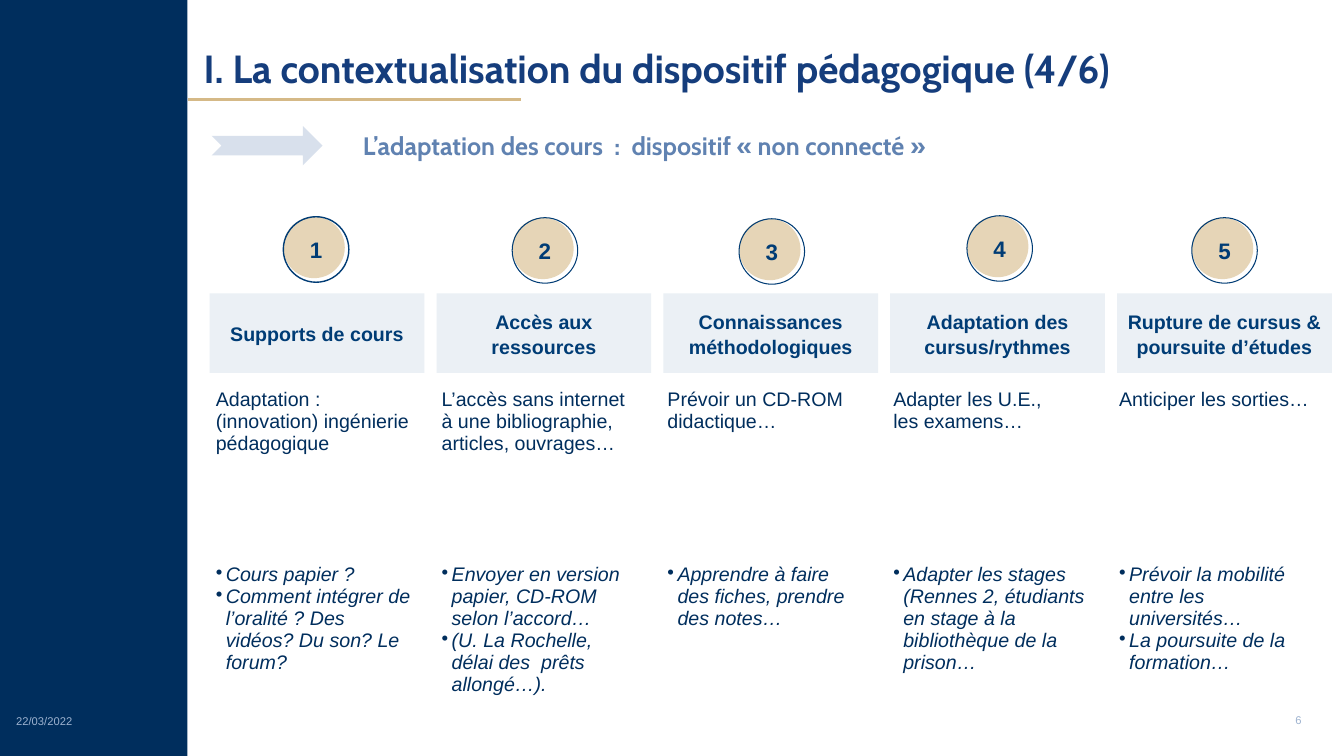
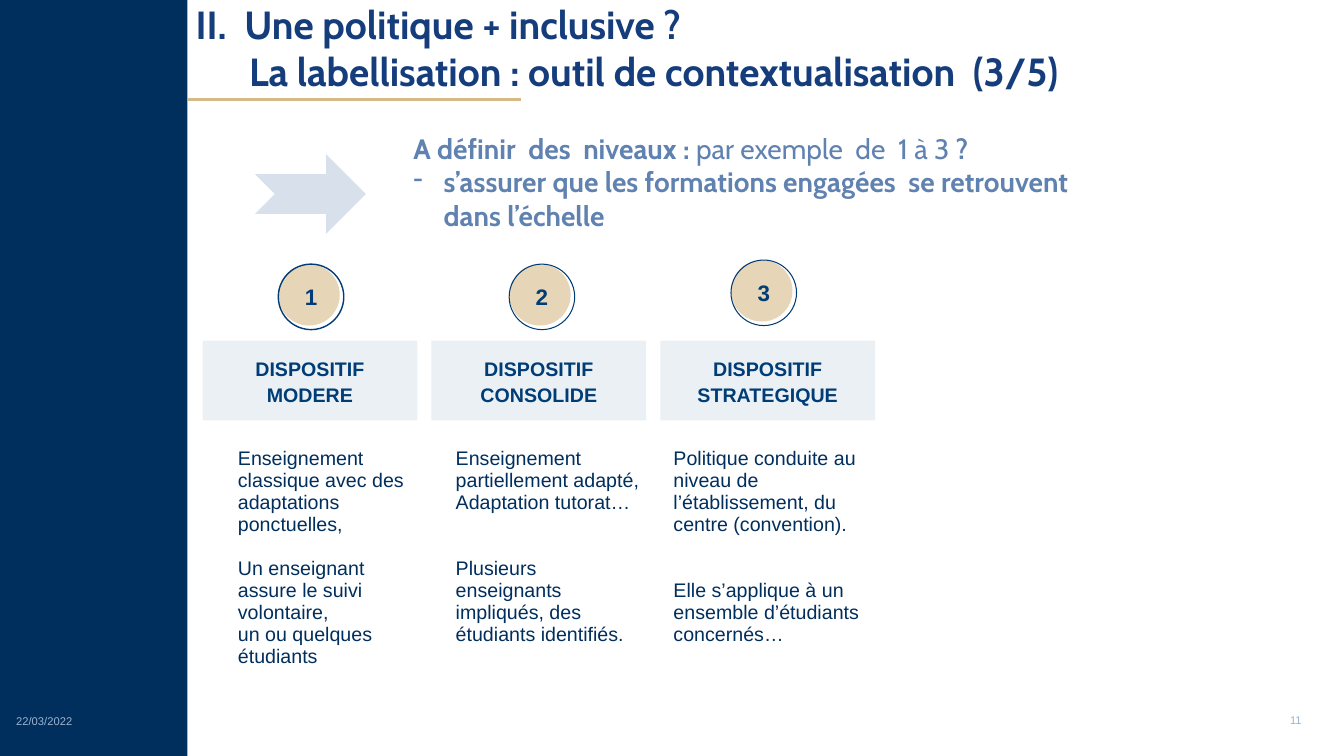
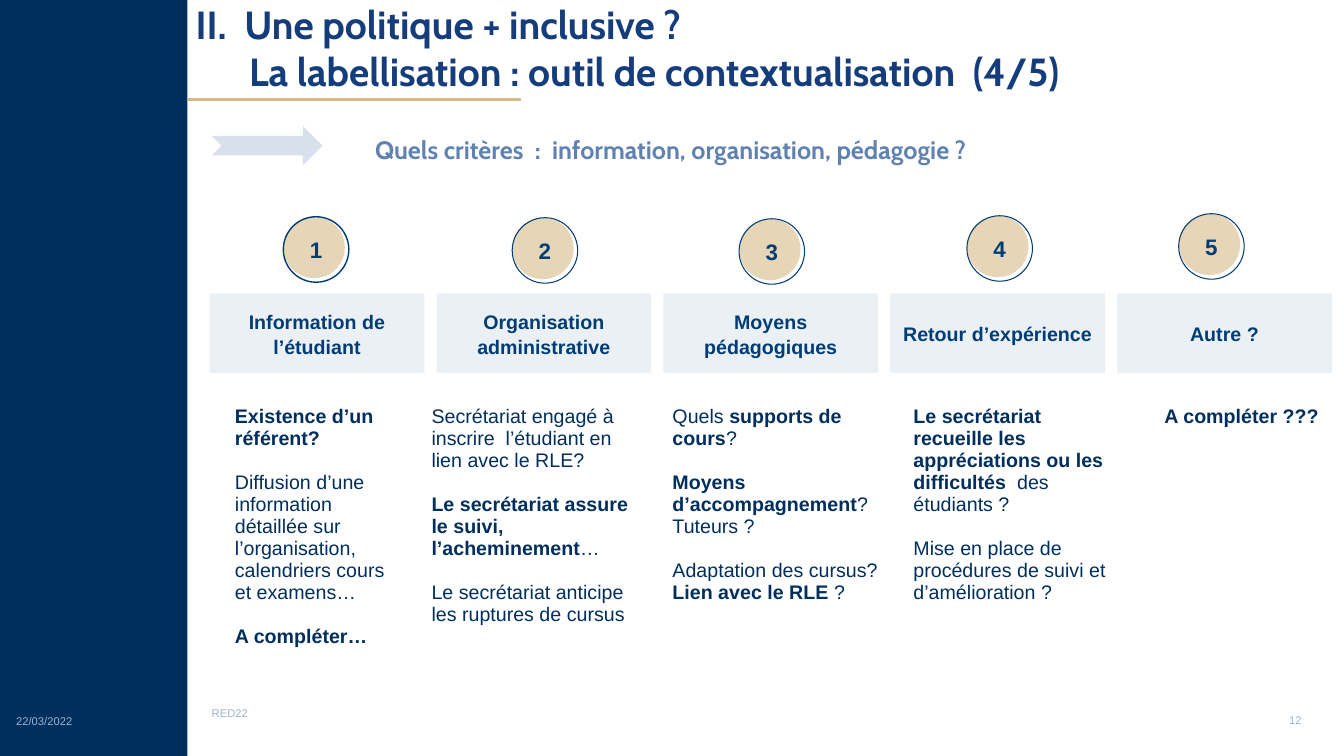
from dataclasses import dataclass
from lxml import etree
from pptx import Presentation
from pptx.dml.color import RGBColor
from pptx.enum import shapes, text
from pptx.oxml.ns import qn
from pptx.util import Inches, Pt


@dataclass(frozen=True)
class Theme:
    navy: str = "002E5D"
    blue: str = "003C75"
    title: str = "153D7C"
    sub: str = "6082B1"
    gold: str = "D5B987"
    sand: str = "E6D5B7"
    card: str = "EBF0F5"
    arrow: str = "D8E0EC"
    foot: str = "9DB2CF"
    head: str = "Cabin"
    body: str = "Arial"
    line: float = 15.7  # height of one line of table text, in points


T = Theme()
WIDE, HIGH = 13.33, 7.5
BAND = 1.86
CARD = (2.13, 0.79)
PAD = 0.15

# Text styles
TITLE = dict(name=T.head, size=28, color=T.title, bold=True)
LEAD = dict(name=T.head, size=18, color=T.sub, bold=True)
FOOT = dict(name=T.body, size=8, color=T.foot, bold=False)
BADGE = dict(name=T.body, size=16, color=T.blue, bold=True)
LABEL = dict(name=T.body, size=14, color=T.blue, bold=True)
CELL = dict(name=T.body, size=14, color=T.navy, bold=False)

# Content. In texts, * switches bold and each leading ^ leaves a line free;
# a leading • or - followed by a bar is a bullet, > an indent.
DATE = "22/03/2022"
FIVE = [(2.81, 2.15), (5.08, 2.16), (7.33, 2.17), (9.59, 2.14)]
LABELS = "II.  Une politique + inclusive ?", ">|La labellisation : outil de contextualisation  "

SLIDES = [
    dict(
        page="6", title=["I. La contextualisation du dispositif pédagogique (4/6)"],
        title_at=(2.02, 0.44), arrow=(2.1, 1.25, 1.1, 0.39),
        lead=["L’adaptation des cours  :  dispositif « non connecté »"],
        lead_at=(3.6, 1.29, 6.6, 0.3), lead_size=18,
        badges=FIVE + [(11.82, 2.16)], card_at=(2.08, 2.91), pitch=2.25,
        cards=["Supports de cours", "Accès aux ressources",
               "Connaissances méthodologiques", "Adaptation des cursus/rythmes",
               "Rupture de cursus & poursuite d’études"],
        table_at=(1.99, 3.71), cols=[2.24] * 5, rows=[1.73, 1.79],
        cells=[
            [["Adaptation : (innovation) ingénierie pédagogique"],
             ["L’accès sans internet à une bibliographie, articles, ouvrages…"],
             ["Prévoir un CD-ROM didactique…"],
             ["Adapter les U.E.,", "les examens…"],
             ["Anticiper les sorties…"]],
            [["•|Cours papier ?",
              "•|Comment intégrer de l’oralité ? Des vidéos? Du son? Le forum?"],
             ["•|Envoyer en version papier, CD-ROM selon l’accord…",
              "•|(U. La Rochelle, délai des  prêts allongé…)."],
             ["•|Apprendre à faire des fiches, prendre des notes…"],
             ["•|Adapter les stages (Rennes 2, étudiants en stage à la "
              "bibliothèque de la prison…"],
             ["•|Prévoir la mobilité entre les universités…",
              "•|La poursuite de la formation…"]],
        ]),
    dict(
        page="11", title=[LABELS[0], LABELS[1] + "(3/5)"],
        title_at=(1.94, 0), arrow=(2.53, 1.53, 1.1, 0.79),
        lead=["A définir  des  niveaux : *par exemple  de  1 à 3* ?",
              "-|s’assurer que les formations engagées  se retrouvent dans l’échelle"],
        lead_at=(4.1, 1.3, 6.92, 1.05), lead_size=20,
        badges=[(2.76, 2.62), (5.05, 2.62), (7.25, 2.58)],
        card_at=(2.01, 3.38), pitch=2.27,
        cards=["DISPOSITIF\nMODERE", "DISPOSITIF\nCONSOLIDE", "DISPOSITIF\nSTRATEGIQUE"],
        table_at=(2.21, 4.29), cols=[2.16, 2.16, 2.16, 1.66, 2.66], rows=[2.5, 0.61],
        cells=[
            [["Enseignement", "classique avec des adaptations ponctuelles,",
              "^Un enseignant assure le suivi volontaire,",
              "un ou quelques étudiants"],
             ["Enseignement partiellement adapté,", "Adaptation tutorat…",
              "^^Plusieurs enseignants impliqués, des étudiants identifiés."],
             ["Politique conduite au niveau de l’établissement, du centre (convention).",
              "^^Elle s’applique à un ensemble d’étudiants concernés…"]],
        ]),
    dict(
        page="12", note="RED22", title=[LABELS[0], LABELS[1] + "(4/5)"],
        title_at=(1.94, 0), arrow=(2.1, 1.25, 1.1, 0.39),
        lead=["Quels critères  :  information, organisation, pédagogie ?"],
        lead_at=(3.72, 1.33, 9.19, 0.3), lead_size=18,
        badges=FIVE + [(11.69, 2.12)], card_at=(2.08, 2.91), pitch=2.25,
        cards=["Information de l’étudiant", "Organisation administrative",
               "Moyens pédagogiques", "Retour d’expérience", "Autre ?"],
        table_at=(2.18, 3.87), cols=[1.95, 2.39, 2.39, 2.39, 2.02], rows=[2.9, 0.5],
        cells=[
            [["*Existence d’un référent?",
              "^Diffusion d’une information détaillée sur l’organisation, "
              "calendriers cours et examens…",
              "^*A compléter…"],
             ["Secrétariat engagé à inscrire  l’étudiant en lien avec le RLE?",
              "^*Le secrétariat assure le suivi, l’acheminement*…",
              "^Le secrétariat anticipe les ruptures de cursus"],
             ["Quels *supports de cours*?", "^*Moyens d’accompagnement*?", "Tuteurs ?",
              "^Adaptation des cursus?", "*Lien avec le RLE *?"],
             ["*Le secrétariat recueille les appréciations ou les difficultés  *"
              "des étudiants ?",
              "^Mise en place de procédures de suivi et d’amélioration ?"],
             [">|*A compléter ???"]],
        ]),
]


def rgb(code):
    return RGBColor.from_string(code)


def inch(*sizes):
    return [Inches(size) for size in sizes]


# Text
def write(frame, paras, style, align="LEFT", pad=0, anchor="TOP", space=1.0,
          dents=None, italic=False):
    """Fill a text frame; dents gives the indent for each paragraph mark."""
    frame.word_wrap = True
    frame.vertical_anchor = text.MSO_ANCHOR[anchor]
    for side in ("left", "top", "right", "bottom"):
        setattr(frame, f"margin_{side}", Inches(pad))
    for row, line in enumerate(paras):
        para = frame.paragraphs[0] if row == 0 else frame.add_paragraph()
        para.alignment = text.PP_ALIGN[align]
        para.line_spacing = space
        bare = line.lstrip("^")
        para.space_before = Pt(T.line * (len(line) - len(bare)))
        mark, bar, rest = bare.partition("|")
        if bar:
            dent, props = Inches(dents[mark]), para._p.get_or_add_pPr()
            props.set("marL", str(dent))
            if mark != ">":
                props.set("indent", str(-dent))
                etree.SubElement(props, qn("a:buChar")).set("char", mark)
            bare = rest
        for turn, part in enumerate(bare.split("*")):
            if part:
                run = para.add_run()
                run.text = part
                font = run.font
                font.color.rgb = rgb(style["color"])
                look = dict(name=style["name"], size=Pt(style["size"]),
                            bold=style["bold"] ^ bool(turn % 2), italic=italic)
                for key, value in look.items():
                    setattr(font, key, value)


def label(slide, at, paras, style, **more):
    box = slide.shapes.add_textbox(*inch(*at))
    write(box.text_frame, paras, style, **more)


# Shapes
def shape(parent, kind, at, fill=None, line=None, width=0.75):
    item = parent.add_shape(shapes.MSO_SHAPE[kind], *inch(*at))
    item.shadow.inherit = False
    if fill:
        item.fill.solid()
        item.fill.fore_color.rgb = rgb(fill)
    else:
        item.fill.background()
    if line:
        item.line.color.rgb = rgb(line)
        item.line.width = Pt(width)
    else:
        item.line.fill.background()
    return item


def dress(layout, slide):
    """Put the side band and the title rule on the layout."""
    band = shape(slide.shapes, "RECTANGLE", (0, 0, BAND, HIGH), T.navy)
    rule = slide.shapes.add_connector(
        shapes.MSO_CONNECTOR.STRAIGHT, *inch(BAND, 0.99, 5.17, 0.99))
    rule.line.color.rgb = rgb(T.gold)
    rule.line.width = Pt(2.25)
    etree.SubElement(rule.element.spPr, qn("a:effectLst"))
    for spot, item in enumerate((band, rule), 2):
        layout.shapes.element.insert(spot, item.element)


def badge(slide, num, at):
    group = slide.shapes.add_group_shape().shapes
    shape(group, "OVAL", (*at, 0.61, 0.61), T.sand)
    ring = shape(group, "OVAL", (*at, 0.65, 0.65), line=T.blue,
                 width=1 if num == 1 else 0.75)
    write(ring.text_frame, [str(num)], BADGE, align="CENTER", anchor="MIDDLE")


def grid(slide, data):
    cols, rows = data["cols"], data["rows"]
    table = slide.shapes.add_table(
        len(rows), len(cols), *inch(*data["table_at"], sum(cols), sum(rows))).table
    table.first_row = table.horz_banding = False
    for col, size in zip(table.columns, cols):
        col.width = Inches(size)
    for row, size in zip(table.rows, rows):
        row.height = Inches(size)
    for cell in table.iter_cells():
        cell.fill.background()
    for y, line in enumerate(data["cells"]):
        for x, paras in enumerate(line):
            cell = table.cell(y, x)
            write(cell.text_frame, paras, CELL, dents={"•": 0.1, ">": 0.1}, italic=y > 0)
            for side in ("left", "top", "right", "bottom"):
                setattr(cell, f"margin_{side}", Inches(PAD))


# One slide
def build(slide, data):
    title = slide.shapes.title
    title.left, title.top, title.width, title.height = inch(
        *data["title_at"], 10.39, 0.47 * len(data["title"]))
    title.text_frame.auto_size = text.MSO_AUTO_SIZE.NONE
    write(title.text_frame, data["title"], TITLE, dents={">": 0.53})

    label(slide, (0.16, 7.09, 1.59, 0.13), [DATE], FOOT, anchor="MIDDLE")
    label(slide, (12.3, 7.08, 0.61, 0.13), [data["page"]], FOOT,
          align="RIGHT", anchor="MIDDLE")
    if "note" in data:
        label(slide, (2.1, 7.01, 5.75, 0.13), [data["note"]], FOOT, anchor="MIDDLE")

    shape(slide.shapes, "NOTCHED_RIGHT_ARROW", data["arrow"], T.arrow)
    label(slide, data["lead_at"], data["lead"], {**LEAD, "size": data["lead_size"]},
          dents={"-": 0.3})

    left, top = data["card_at"]
    for col, (name, spot) in enumerate(zip(data["cards"], data["badges"])):
        badge(slide, col + 1, spot)
        card = shape(slide.shapes, "RECTANGLE",
                     (left + col * data["pitch"], top, *CARD), T.card)
        write(card.text_frame, name.split("\n"), LABEL, align="CENTER",
              pad=0.08, anchor="MIDDLE", space=1.08)
    grid(slide, data)


def main():
    deck = Presentation()
    deck.slide_width, deck.slide_height = inch(WIDE, HIGH)
    layout = deck.slide_layouts[5]
    for num, data in enumerate(SLIDES):
        slide = deck.slides.add_slide(layout)
        if num == 0:
            dress(layout, slide)
        build(slide, data)
    deck.save("out.pptx")


if __name__ == "__main__":
    main()
